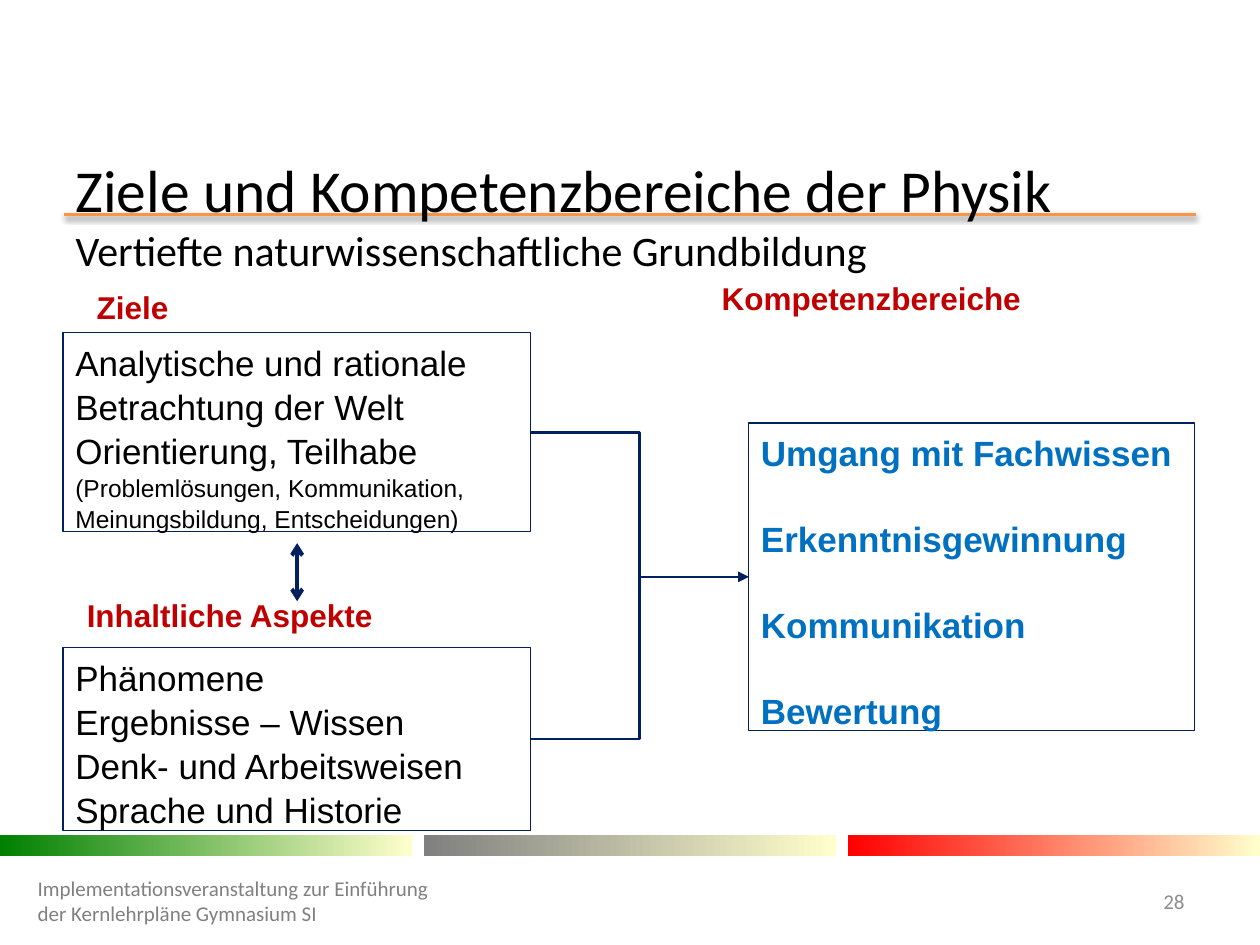
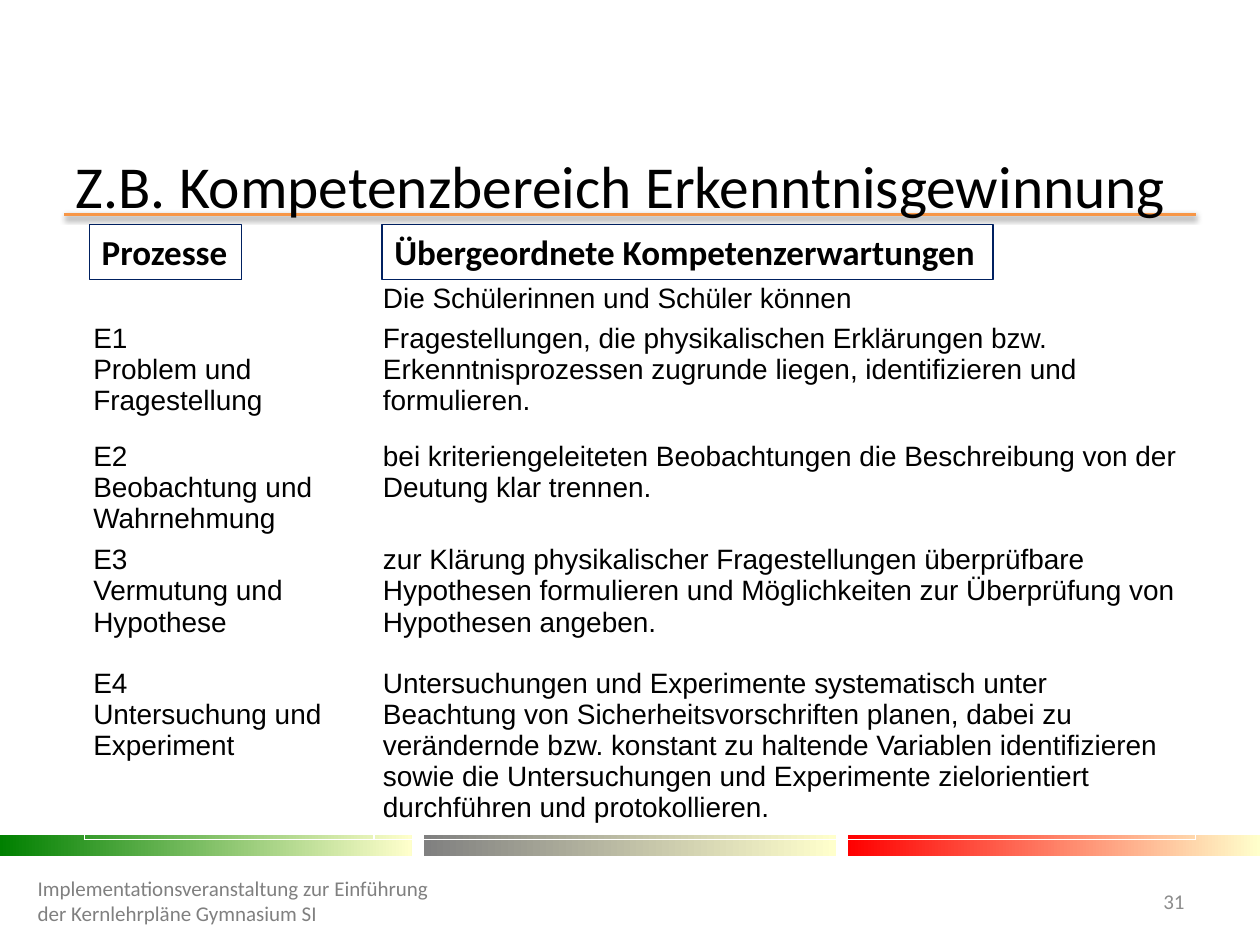
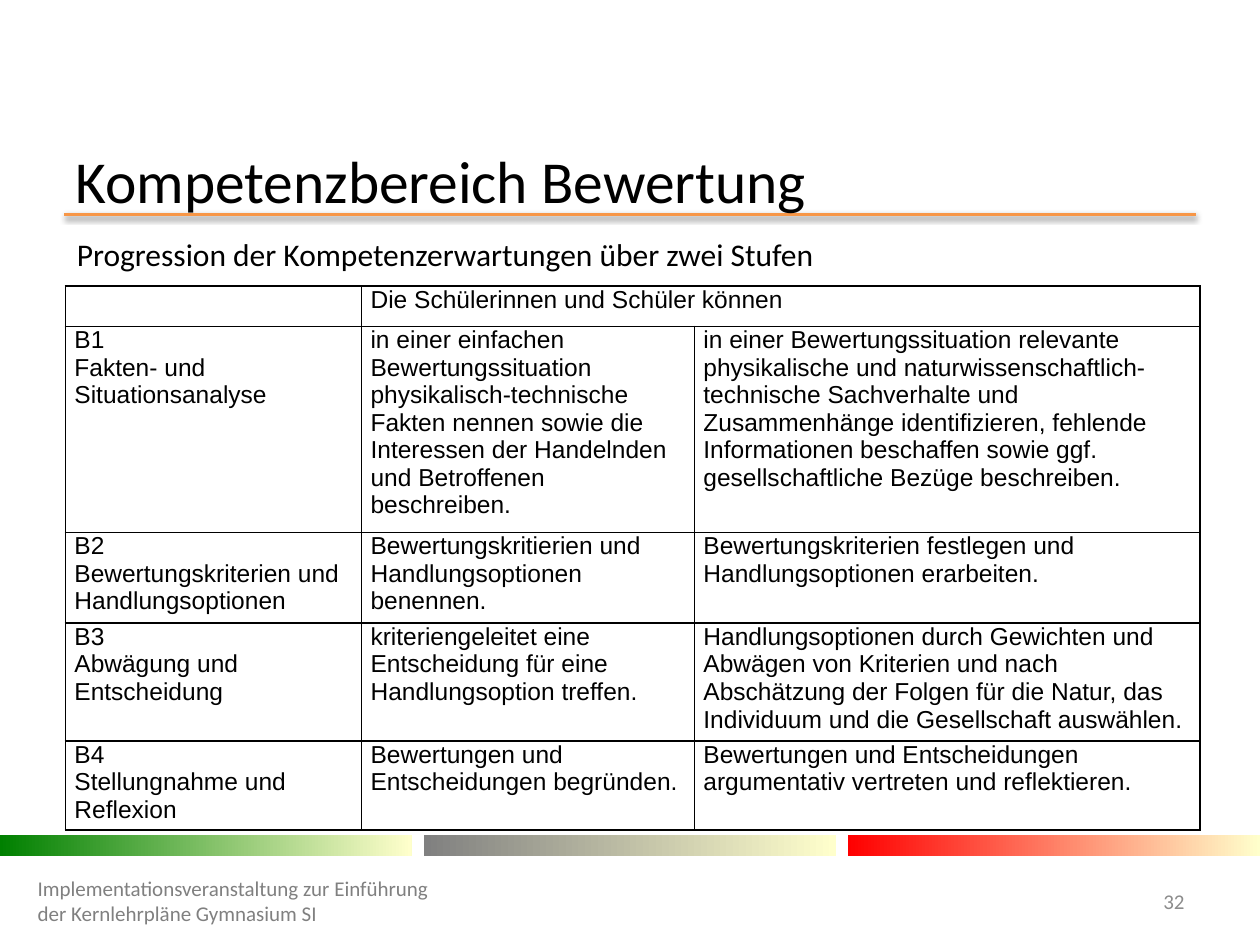
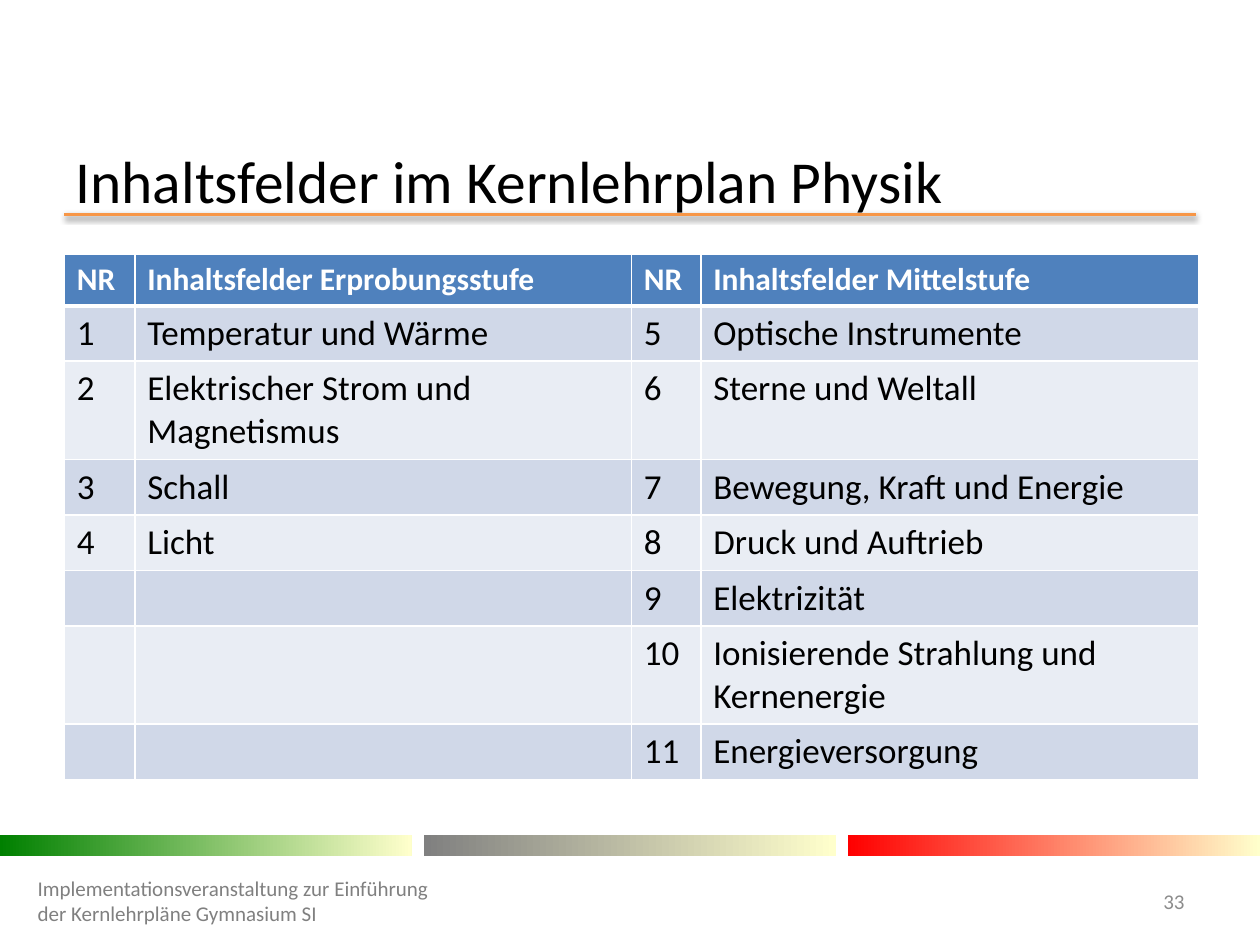
from dataclasses import dataclass
from typing import NamedTuple, Optional

from lxml import etree
from pptx import Presentation
from pptx.dml.color import RGBColor
from pptx.enum.shapes import MSO_CONNECTOR, MSO_SHAPE
from pptx.enum.text import MSO_ANCHOR, MSO_AUTO_SIZE, PP_ALIGN
from pptx.oxml import parse_xml
from pptx.oxml.ns import nsdecls, qn
from pptx.util import Cm, Pt

BLACK, WHITE, NAVY, RED, BLUE = "000000", "FFFFFF", "002060", "C00000", "0070C0"
ORANGE, CREAM, FOOTER_GREY, NUMBER_GREY = "F79646", "FFFFCC", "808080", "8C8C8C"
HEADER_BLUE, ROW_FILLS = "4F81BD", ("D0D8E8", "E9EDF4")
BANDS = ("008000", "808080", "FF0000")
BAND_STEP, BAND_WIDTH = 8.55, 8.3
FOOTER = "Implementationsveranstaltung zur Einführung der Kernlehrpläne Gymnasium SI"
CAN = "Die Schülerinnen und Schüler können"


class Run(NamedTuple):
    """A piece of text with its size in points."""

    text: str
    size: float


@dataclass(frozen=True)
class Style:
    """The look of the text in a box or cell."""

    size: float
    color: str = BLACK
    bold: bool = False
    font: str = "Arial"
    align: PP_ALIGN = PP_ALIGN.LEFT
    gap: float = 0
    after: Optional[float] = None
    spacing: Optional[float] = None


@dataclass(frozen=True)
class Box:
    """A text box or outlined rectangle, measured in centimetres."""

    left: float
    top: float
    width: float
    height: float
    paragraphs: list
    style: Style
    border: Optional[str] = None
    wrap: bool = True
    anchor: MSO_ANCHOR = MSO_ANCHOR.TOP


@dataclass(frozen=True)
class Grid:
    """A table, measured in centimetres."""

    left: float
    top: float
    columns: list
    heights: list
    rows: list
    style: Style
    border: Optional[str] = None
    header: Optional[Style] = None
    side_margin: float = 0.18
    top_margin: float = 0


LABEL = Style(18, RED, True)
BODY = Style(20, spacing=1.05)
AREAS = Style(20, BLUE, True, gap=24, spacing=1.05)
HEADING = Style(20, bold=True, font="Calibri")

LABELS = [
    Box(1.7, 5.69, 10, 1.02, ["Ziele"], LABEL),
    Box(14.3, 5.51, 10, 1.02, ["Kompetenzbereiche"], LABEL),
    Box(1.5, 11.89, 10, 1.02, ["Inhaltliche Aspekte"], LABEL),
]
GOALS = Box(1.27, 6.71, 9.42, 4.01, [
    "Analytische und rationale Betrachtung der Welt",
    [Run("Orientierung, Teilhabe ", 20),
     Run("(Problemlösungen, Kommunikation, Meinungsbildung, Entscheidungen)", 14)],
], BODY, NAVY)
ASPECTS = Box(1.27, 13.06, 9.42, 3.68, [
    "Phänomene", "Ergebnisse – Wissen", "Denk- und Arbeitsweisen", "Sprache und Historie",
], BODY, NAVY)
COMPETENCES = Box(15.09, 8.53, 8.99, 6.2, [
    "Umgang mit Fachwissen", "Erkenntnisgewinnung", "Kommunikation", "Bewertung",
], AREAS, NAVY)

PROCESS_HEADINGS = [
    Box(1.8, 4.52, 3.07, 1.12, ["Prozesse"], HEADING, NAVY, False),
    Box(7.7, 4.52, 12.32, 1.12, ["Übergeordnete Kompetenzerwartungen"], HEADING, NAVY, False),
]
PROCESSES = Grid(1.7, 5.72, [5.84, 16.56], [0.79, 2.39, 2.08, 2.49, 3.45], [
    ["", CAN],
    ["E1\nProblem und Fragestellung",
     "Fragestellungen, die physikalischen Erklärungen bzw. Erkenntnisprozessen zugrunde "
     "liegen, identifizieren und formulieren."],
    ["E2\nBeobachtung und Wahrnehmung",
     "bei kriteriengeleiteten Beobachtungen die Beschreibung von der Deutung klar trennen."],
    ["E3\nVermutung und Hypothese",
     "zur Klärung physikalischer Fragestellungen überprüfbare Hypothesen formulieren und "
     "Möglichkeiten zur Überprüfung von Hypothesen angeben."],
    ["E4\nUntersuchung und Experiment",
     "Untersuchungen und Experimente systematisch unter Beachtung von "
     "Sicherheitsvorschriften planen, dabei zu verändernde bzw. konstant zu haltende "
     "Variablen identifizieren sowie die Untersuchungen und Experimente zielorientiert "
     "durchführen und protokollieren."],
], Style(16, after=12))

PROGRESSION = Box(1.3, 4.62, 15.54, 1.02,
                  ["Progression der Kompetenzerwartungen über zwei Stufen"],
                  Style(18, font="Calibri"), wrap=False)
STAGES = Grid(1.32, 5.77, [5.97, 6.71, 10.19], [0.81, 4.14, 1.83, 2.36, 1.8], [
    ["", CAN, None],
    ["B1\nFakten- und Situationsanalyse",
     "in einer einfachen Bewertungssituation physikalisch-technische Fakten nennen sowie "
     "die Interessen der Handelnden und Betroffenen beschreiben.",
     "in einer Bewertungssituation relevante physikalische und "
     "naturwissenschaftlich-technische Sachverhalte und Zusammenhänge identifizieren, "
     "fehlende Informationen beschaffen sowie ggf. gesellschaftliche Bezüge beschreiben."],
    ["B2\nBewertungskriterien und Handlungsoptionen",
     "Bewertungskritierien und Handlungsoptionen benennen.",
     "Bewertungskriterien festlegen und Handlungsoptionen erarbeiten."],
    ["B3\nAbwägung und Entscheidung",
     "kriteriengeleitet eine Entscheidung für eine Handlungsoption treffen.",
     "Handlungsoptionen durch Gewichten und Abwägen von Kriterien und nach Abschätzung der "
     "Folgen für die Natur, das Individuum und die Gesellschaft auswählen."],
    ["B4\nStellungnahme und Reflexion",
     "Bewertungen und Entscheidungen begründen.",
     "Bewertungen und Entscheidungen argumentativ vertreten und reflektieren."],
], Style(14, after=12), BLACK)

FIELDS = Grid(1.3, 5.13, [1.42, 10.01, 1.4, 10.03],
              [1.04, 1.1, 1.98, 1.12, 1.12, 1.12, 1.98, 1.12], [
    ["NR", "Inhaltsfelder Erprobungsstufe", "NR", "Inhaltsfelder Mittelstufe"],
    ["1", "Temperatur und Wärme", "5", "Optische Instrumente"],
    ["2", "Elektrischer Strom und Magnetismus", "6", "Sterne und Weltall"],
    ["3", "Schall", "7", "Bewegung, Kraft und Energie"],
    ["4", "Licht", "8", "Druck und Auftrieb"],
    ["", "", "9", "Elektrizität"],
    ["", "", "10", "Ionisierende Strahlung und Kernenergie"],
    ["", "", "11", "Energieversorgung"],
], Style(20, font="Calibri"), WHITE, Style(18, WHITE, True, "Calibri"), 0.25, 0.13)


def rgb(color: str) -> RGBColor:
    """Turn a hex string into a colour."""
    return RGBColor.from_string(color)


def format_font(font, style: Style, size: float) -> None:
    """Apply a style to a font."""
    font.name, font.size, font.bold = style.font, Pt(size), style.bold
    font.color.rgb = rgb(style.color)


def write(tf, paragraphs: list, style: Style) -> None:
    """Fill a text frame run by run, with line breaks at newlines."""
    for i, paragraph in enumerate(paragraphs):
        p = tf.add_paragraph() if i else tf.paragraphs[0]
        p.alignment = style.align
        if i and style.gap:
            p.space_before = Pt(style.gap)
        if style.after is not None:
            p.space_after = Pt(style.after)
        if style.spacing:
            p.line_spacing = style.spacing
        runs = [Run(paragraph, style.size)] if isinstance(paragraph, str) else paragraph
        for run in runs:
            for n, line in enumerate(run.text.split("\n")):
                if n:
                    p.add_line_break()
                r = p.add_run()
                r.text = line
                format_font(r.font, style, run.size)


def add_box(slide, box: Box):
    """Draw a text box, or a rectangle when it has a border."""
    place = [Cm(v) for v in (box.left, box.top, box.width, box.height)]
    if box.border:
        sp = slide.shapes.add_shape(MSO_SHAPE.RECTANGLE, *place)
        sp.shadow.inherit = False
        sp.fill.background()
        sp.line.color.rgb = rgb(box.border)
        sp.line.width = Pt(0.75)
    else:
        sp = slide.shapes.add_textbox(*place)
    tf = sp.text_frame
    tf.word_wrap = box.wrap
    tf.vertical_anchor = box.anchor
    write(tf, box.paragraphs, box.style)
    return sp


def add_line(slide, kind, ends: tuple, color: str, width: float, **arrows: str):
    """Draw a connector without shadow; arrows maps headEnd and tailEnd to a type."""
    line = slide.shapes.add_connector(kind, *[Cm(v) for v in ends])
    line.line.color.rgb = rgb(color)
    line.line.width = Pt(width)
    ln = line.line._get_or_add_ln()
    for end, arrow in arrows.items():
        etree.SubElement(ln, qn(f"a:{end}"), type=arrow)
    etree.SubElement(line._element.spPr, qn("a:effectLst"))
    return line


def join(slide, source, target) -> None:
    """Lead an elbow arrow from the right of one box to the left of another."""
    line = add_line(slide, MSO_CONNECTOR.ELBOW, (0, 0, 1, 1), NAVY, 1.5, tailEnd="triangle")
    line.begin_connect(source, 3)
    line.end_connect(target, 1)


def set_border(cell, color: str, bottom: float) -> None:
    """Give a cell one-point borders and a bottom border of its own width."""
    tc_pr = cell._tc.get_or_add_tcPr()
    for i, side in enumerate("LRTB"):
        width = Pt(bottom if side == "B" else 1)
        tc_pr.insert(i, parse_xml(
            f'<a:ln{side} {nsdecls("a")} w="{width}"><a:solidFill>'
            f'<a:srgbClr val="{color}"/></a:solidFill></a:ln{side}>'))


def add_grid(slide, grid: Grid) -> None:
    """Draw a table; None in a row widens the cell before it."""
    frame = slide.shapes.add_table(
        len(grid.rows), len(grid.columns), Cm(grid.left), Cm(grid.top),
        Cm(sum(grid.columns)), Cm(sum(grid.heights)))
    table = frame.table
    table.first_row = table.horz_banding = False
    for column, width in zip(table.columns, grid.columns):
        column.width = Cm(width)
    for r, (row, height) in enumerate(zip(grid.rows, grid.heights)):
        table.rows[r].height = Cm(height)
        is_header = grid.header is not None and r == 0
        style = grid.header if is_header else grid.style
        for c, text in enumerate(row):
            cell = table.cell(r, c)
            cell.margin_left = cell.margin_right = Cm(grid.side_margin)
            cell.margin_top = cell.margin_bottom = Cm(grid.top_margin)
            if grid.header:
                cell.fill.solid()
                cell.fill.fore_color.rgb = rgb(HEADER_BLUE if is_header else ROW_FILLS[(r + 1) % 2])
            else:
                cell.fill.background()
            if grid.border:
                set_border(cell, grid.border, 3 if is_header else 1)
            if text is None:
                table.cell(r, c - 1).merge(cell)
            elif text:
                write(cell.text_frame, [text], style)
            else:
                format_font(cell.text_frame.paragraphs[0].font, style, style.size)


def build_layout(slide) -> None:
    """Draw the title rule and the colour bands, and hand them to the layout."""
    rule = add_line(slide, MSO_CONNECTOR.STRAIGHT, (1.3, 4.32, 24.1, 4.32), ORANGE, 2)
    rule._element.spPr.find(qn("a:effectLst")).append(parse_xml(
        f'<a:outerShdw {nsdecls("a")} blurRad="40000" dist="20000" dir="5400000" '
        'rotWithShape="0"><a:srgbClr val="000000"><a:alpha val="38000"/></a:srgbClr>'
        '</a:outerShdw>'))
    parts = [rule]
    for i, color in enumerate(BANDS):
        band = slide.shapes.add_shape(
            MSO_SHAPE.RECTANGLE, Cm(i * BAND_STEP), Cm(16.84), Cm(BAND_WIDTH), Cm(0.41))
        band.shadow.inherit = False
        band.line.fill.background()
        band.fill.gradient()
        band.fill.gradient_angle = 0
        for stop, shade, position in zip(band.fill.gradient_stops, (color, CREAM), (0, 1)):
            stop.color.rgb = rgb(shade)
            stop.position = position
        parts.append(band)
    for part in parts:
        slide.slide_layout.shapes.element.append(part._element)


def add_slide(prs, number: int, title_height: float, *title: Run):
    """Add a slide with its title, footer and number."""
    slide = prs.slides.add_slide(prs.slide_layouts[5])
    sp = slide.shapes.title
    sp.left, sp.top, sp.width, sp.height = Cm(1.27), Cm(3.12), Cm(22.86), Cm(title_height)
    tf = sp.text_frame
    tf.word_wrap = True
    tf.auto_size = MSO_AUTO_SIZE.NONE
    tf.vertical_anchor = MSO_ANCHOR.MIDDLE
    write(tf, [list(title)], Style(34, font="Calibri"))
    add_box(slide, Box(0.51, 17.65, 8.41, 1.02, [FOOTER],
                       Style(12, FOOTER_GREY, font="Calibri"), anchor=MSO_ANCHOR.MIDDLE))
    add_box(slide, Box(22.5, 17.65, 1.63, 1.02, [str(number)],
                       Style(12, NUMBER_GREY, font="Calibri", align=PP_ALIGN.RIGHT),
                       anchor=MSO_ANCHOR.MIDDLE))
    return slide


def main() -> None:
    """Build the four slides and save them."""
    prs = Presentation()
    prs.slide_width, prs.slide_height = Cm(25.4), Cm(19.05)

    slide = add_slide(prs, 28, 2.39, Run("Ziele und Kompetenzbereiche der Physik\n", 34),
                      Run("Vertiefte naturwissenschaftliche Grundbildung", 24))
    build_layout(slide)
    goals, aspects, competences = [add_box(slide, b) for b in (GOALS, ASPECTS, COMPETENCES)]
    for label in LABELS:
        add_box(slide, label)
    for source in (goals, aspects):
        join(slide, source, competences)
    add_line(slide, MSO_CONNECTOR.STRAIGHT, (5.99, 10.95, 5.99, 12.12), NAVY, 2.25,
             headEnd="arrow", tailEnd="arrow")

    slide = add_slide(prs, 31, 1.19, Run("Z.B. Kompetenzbereich Erkenntnisgewinnung", 34))
    add_grid(slide, PROCESSES)
    for heading in PROCESS_HEADINGS:
        add_box(slide, heading)

    slide = add_slide(prs, 32, 0.99, Run("Kompetenzbereich Bewertung", 34))
    add_box(slide, PROGRESSION)
    add_grid(slide, STAGES)

    slide = add_slide(prs, 33, 0.99, Run("Inhaltsfelder im Kernlehrplan Physik", 34))
    add_grid(slide, FIELDS)
    prs.save("out.pptx")


if __name__ == "__main__":
    main()
